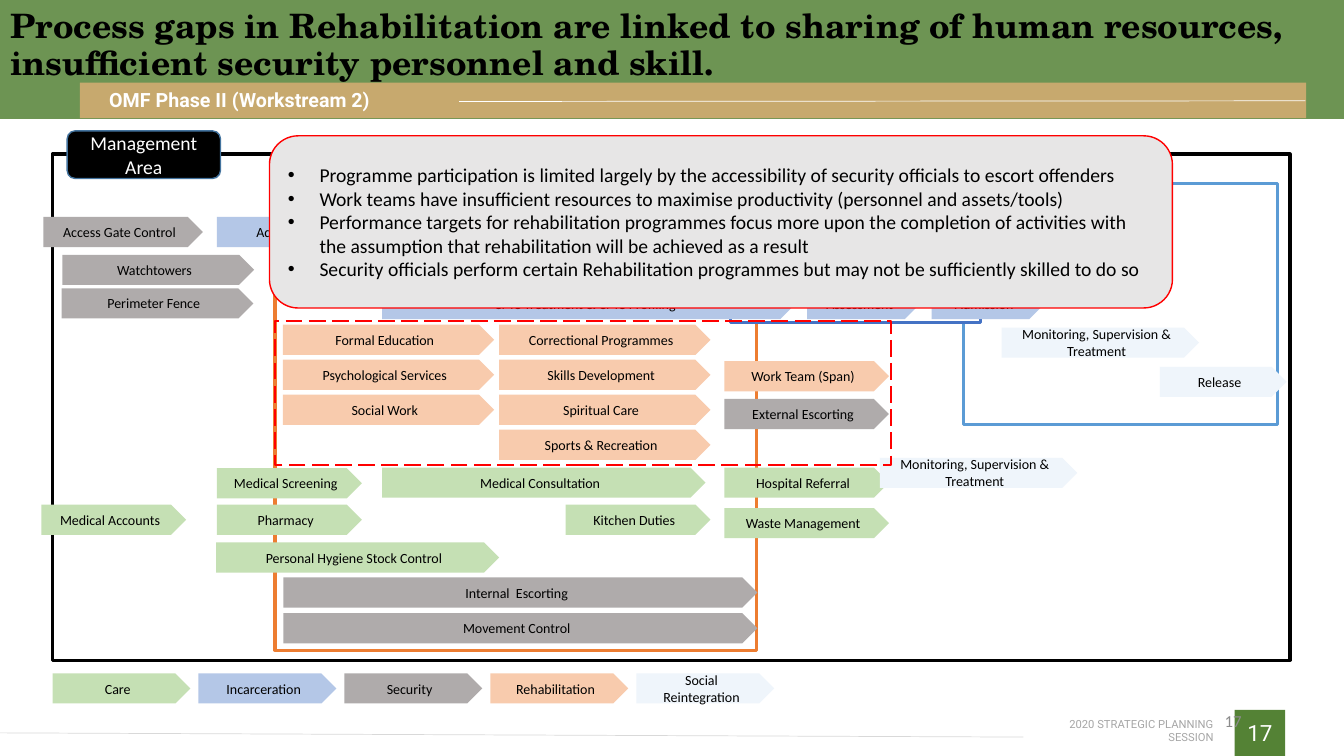
from collections import namedtuple
from dataclasses import dataclass

from pptx import Presentation
from pptx.dml.color import RGBColor
from pptx.enum.dml import MSO_LINE_DASH_STYLE as Dash
from pptx.enum.shapes import MSO_CONNECTOR as Connector, MSO_SHAPE as Preset
from pptx.enum.text import MSO_ANCHOR as Anchor, MSO_AUTO_SIZE as AutoSize, PP_ALIGN as Align
from pptx.oxml.ns import qn
from pptx.util import Pt
from lxml.etree import SubElement

Box = namedtuple("Box", "left top width height")


@dataclass(frozen=True)
class Theme:
    black: str = "000000"
    white: str = "FFFFFF"
    green: str = "548235"
    gold: str = "C7A96E"
    red: str = "FF0000"
    orange: str = "ED7D31"
    sky: str = "5B9BD5"
    blue: str = "4472C4"
    label_edge: str = "43739E"
    callout: str = "E7E6E6"
    rule: str = "D9D9D9"
    footer: str = "A6A6A6"
    number: str = "8C8C8C"
    care: str = "C5E0B4"
    incarceration: str = "B4C7E7"
    security: str = "AFABAB"
    rehabilitation: str = "F8CBAD"
    reintegration: str = "EFF5FB"
    heading: str = "TeX Gyre Schola"
    accent: str = "Roboto"
    body: str = "Calibri"
    title_size: int = 24
    badge_size: int = 16
    text_size: int = 14
    number_size: int = 12
    step_size: int = 10
    footer_size: int = 8


THEME = Theme()
STEP_HEIGHT = 21.5


def place(shape, box):
    shape.left, shape.top, shape.width, shape.height = (Pt(length) for length in box)


def within(outer, left, top, width, height):
    return Box(outer.left + left, outer.top + top, width, height)


def write(shape, lines, size, color=THEME.black, font=THEME.body, bold=False,
          align=Align.CENTER, anchor=Anchor.MIDDLE, margin=None):
    frame = shape.text_frame
    frame.word_wrap = True
    frame.auto_size = AutoSize.NONE
    frame.vertical_anchor = anchor
    if margin is not None:
        frame.margin_left = frame.margin_right = Pt(margin)
        frame.margin_top = frame.margin_bottom = Pt(margin)
    frame.text = lines
    for paragraph in frame.paragraphs:
        paragraph.alignment = align
        paragraph.space_before = Pt(0)
        for run in paragraph.runs:
            run.font.name = font
            run.font.size = Pt(size)
            run.font.bold = bold
            run.font.color.rgb = RGBColor.from_string(color)


def add_text(slide, box, text, size, **style):
    shape = slide.shapes.add_textbox(*(Pt(length) for length in box))
    write(shape, text, size, **style)


def add_box(slide, box, fill=None, line=None, weight=1, preset=Preset.RECTANGLE):
    shape = slide.shapes.add_shape(preset, *(Pt(length) for length in box))
    shape.shadow.inherit = False
    if fill:
        shape.fill.solid()
        shape.fill.fore_color.rgb = RGBColor.from_string(fill)
    else:
        shape.fill.background()
    if line:
        shape.line.color.rgb = RGBColor.from_string(line)
        shape.line.width = Pt(weight)
    else:
        shape.line.fill.background()
    return shape


def add_rule(slide, start, end, color):
    rule = slide.shapes.add_connector(Connector.STRAIGHT, *(Pt(length) for length in start + end))
    rule.line.color.rgb = RGBColor.from_string(color)
    rule.line.width = Pt(0.5)
    SubElement(rule._element.spPr, qn("a:effectLst"))


def add_step(slide, box, text, fill):
    step = add_box(slide, box, fill, preset=Preset.PENTAGON)
    write(step, text, THEME.step_size)


def bring_to_front(slide, shape):
    slide.shapes._spTree.append(shape._element)


def header(slide, box):
    band = add_box(slide, box, THEME.green)
    color = band._element.spPr.find(qn("a:solidFill")).find(qn("a:srgbClr"))
    SubElement(color, qn("a:alpha"), val="85000")
    add_box(slide, within(box, 57, 59, 876, 25.5), THEME.gold)
    add_rule(slide, (box.left + 328, box.top + 72.5), (box.left + 932.5, box.top + 72), THEME.white)
    title = slide.shapes.title
    place(title, within(box, 0, 3.5, box.width, 80))
    write(title, "Process gaps in Rehabilitation are linked to sharing of human resources, "
          "insufficient security personnel and skill.", THEME.title_size,
          font=THEME.heading, bold=True, align=Align.LEFT, anchor=Anchor.TOP)
    title.text_frame.paragraphs[0].line_spacing = 0.9
    bring_to_front(slide, title)
    add_text(slide, within(box, 78, 62.5, 250, 17.5), "OMF Phase II (Workstream 2)", THEME.text_size,
             color=THEME.white, font=THEME.accent, bold=True, align=Align.LEFT, margin=0)


def process_map(slide, box):
    add_box(slide, box, THEME.white, THEME.black, 2.25)
    for area, color in (
        ((159, 20.5, 344, 334), THEME.orange),
        ((651, 21, 224, 172), THEME.sky),
        ((484.5, 73.5, 178.5, 47), THEME.blue),
    ):
        add_box(slide, within(box, *area), THEME.white, color, 2.25)
    label = add_box(slide, within(box, 10.5, -16.5, 109.5, 34), THEME.black, THEME.label_edge,
                    preset=Preset.ROUNDED_RECTANGLE)
    write(label, "Management Area", THEME.text_size, color=THEME.white)

    programmes = (
        (164.5, ("Formal Education", "Psychological Services", "Social Work")),
        (319, ("Correctional Programmes", "Skills Development", "Spiritual Care", "Sports & Recreation")),
    )
    for left, names in programmes:
        for row, name in enumerate(names):
            add_step(slide, within(box, left, 122 + 25 * row, 151, STEP_HEIGHT), name, THEME.rehabilitation)

    steps = {
        THEME.rehabilitation: ((480, 148, 117.5, "Work Team (Span)"),),
        THEME.security: (
            (-6.5, 45, 114, "Access Gate Control"),
            (7, 72, 137, "Watchtowers"),
            (6.5, 96, 137, "Perimeter Fence"),
            (480, 175, 117.5, "External Escorting"),
            (165, 302.5, 338.5, "Internal  Escorting"),
            (165, 328, 338.5, "Movement Control"),
        ),
        THEME.incarceration: (
            (117.5, 45, 103.5, "Admission"),
            (235.5, 96.5, 295, "CMC Treatment & CMC Profiling"),
            (539, 96.5, 80.5, "Assessment"),
            (628, 96.5, 80.5, "Admission"),
        ),
        THEME.care: (
            (117.5, 224.5, 103.5, "Medical Screening"),
            (235.5, 224, 231, "Medical Consultation"),
            (480, 224, 117.5, "Hospital Referral"),
            (-8, 250.5, 103.5, "Medical Accounts"),
            (117.5, 250.5, 103.5, "Pharmacy"),
            (366.5, 250.5, 103.5, "Kitchen Duties"),
            (480, 253, 117.5, "Waste Management"),
            (117, 277.5, 202, "Personal Hygiene Stock Control"),
        ),
        THEME.reintegration: (
            (678, 124, 141, "Monitoring, Supervision & Treatment"),
            (791, 152, 90.5, "Release"),
            (591, 217, 141, "Monitoring, Supervision & Treatment"),
        ),
    }
    for color, group in steps.items():
        for left, top, width, name in group:
            add_step(slide, within(box, left, top, width, STEP_HEIGHT), name, color)
    focus = add_box(slide, within(box, 159, 119, 440, 103), line=THEME.red, weight=1.5)
    focus.line.dash_style = Dash.LONG_DASH


def legend(slide, box):
    for index, name in enumerate(("Care", "Incarceration", "Security", "Rehabilitation", "Social Reintegration")):
        color = getattr(THEME, name.split()[-1].lower())
        add_step(slide, within(box, 104.25 * index, 0, 98.5, box.height), name, color)


def callout(slide, box):
    add_box(slide, box, THEME.callout, THEME.red, preset=Preset.ROUNDED_RECTANGLE)
    findings = slide.placeholders[1]
    place(findings, within(box, 6, 6, box.width - 12, box.height - 12))
    write(findings, "\n".join((
        "Programme participation is limited largely by the accessibility of security officials to escort offenders",
        "Work teams have insufficient resources to maximise productivity (personnel and assets/tools)",
        "Performance targets for rehabilitation programmes focus more upon the completion of activities "
        "with the assumption that rehabilitation will be achieved as a result",
        "Security officials perform certain Rehabilitation programmes but may not be sufficiently skilled to do so",
    )), THEME.text_size, align=Align.LEFT)
    for paragraph in findings.text_frame.paragraphs:
        properties = paragraph._p.get_or_add_pPr()
        properties.set("marL", str(Pt(22.5)))
        properties.set("indent", str(-Pt(22.5)))
        SubElement(properties, qn("a:buChar"), char="•")
    bring_to_front(slide, findings)


def footer(slide, box):
    badge = add_box(slide, within(box, 882, 7, 36, 33), THEME.green)
    write(badge, "17", THEME.badge_size, color=THEME.white, font=THEME.accent)
    add_text(slide, within(box, 731, 17, 136, 9.5), "2020 STRATEGIC PLANNING SESSION", THEME.footer_size,
             color=THEME.footer, font=THEME.accent, align=Align.RIGHT, margin=0)
    add_rule(slide, (box.left + 731, box.top + 26.5), (box.left, box.top + 23.5), THEME.rule)
    add_text(slide, within(box, 678, 0.5, 216, 29), "17", THEME.number_size,
             color=THEME.number, align=Align.RIGHT)


def main():
    presentation = Presentation()
    presentation.slide_width, presentation.slide_height = Pt(960), Pt(540)
    slide = presentation.slides.add_slide(presentation.slide_layouts[1])
    footer(slide, Box(0, 500, 960, 40))
    header(slide, Box(0, 0, 960, 85))
    process_map(slide, Box(37.5, 110, 884, 361.5))
    legend(slide, Box(37.5, 481, 516, STEP_HEIGHT))
    callout(slide, Box(192.5, 97, 645, 123))
    presentation.save("out.pptx")


if __name__ == "__main__":
    main()
